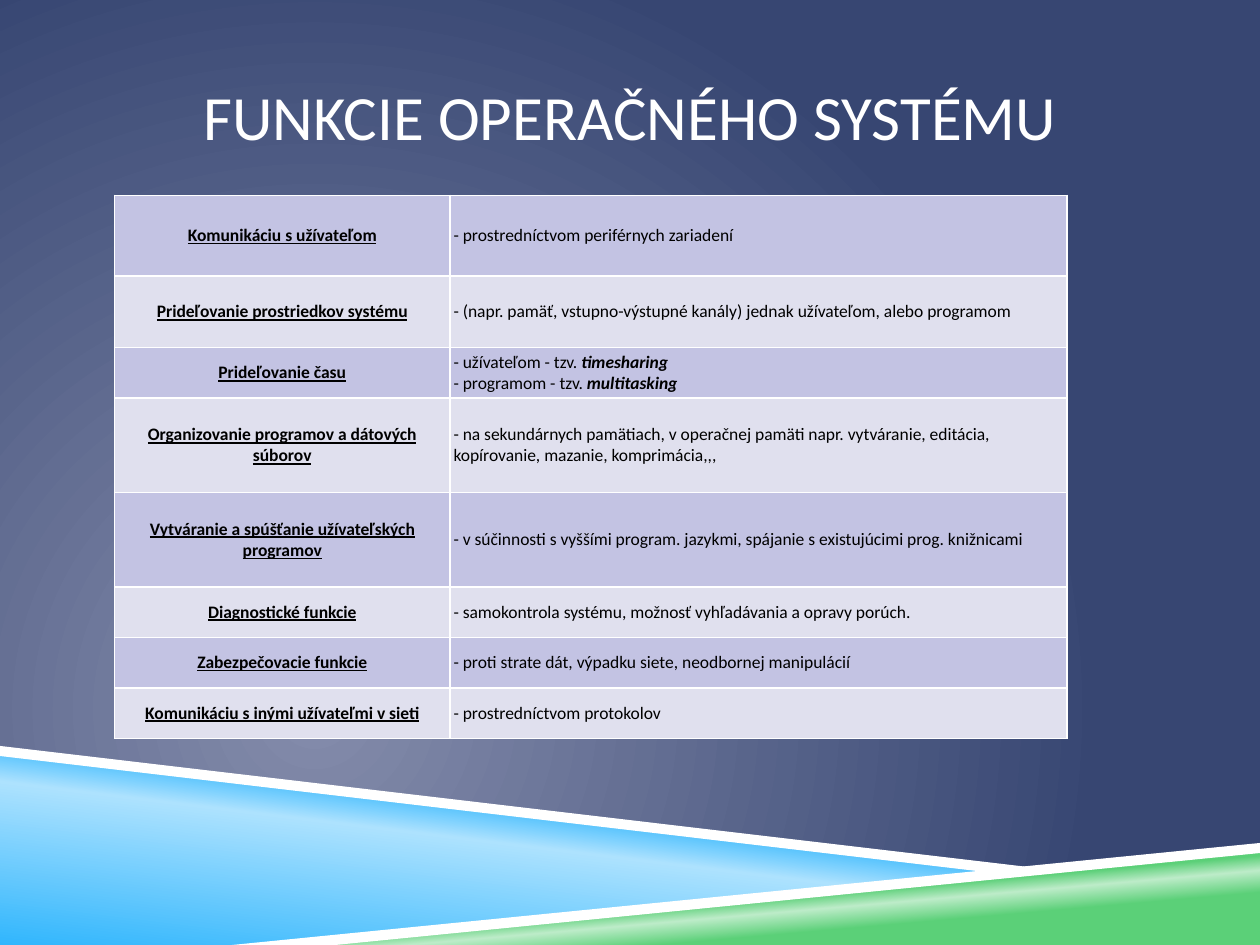
"""Build a slide with a table of operating system functions."""
from lxml.etree import SubElement
from pptx import Presentation
from pptx.dml.color import RGBColor
from pptx.enum.text import MSO_ANCHOR, PP_ALIGN
from pptx.oxml.ns import qn
from pptx.util import Inches, Pt

FONT = "Calibri"
WHITE = RGBColor(0xFF, 0xFF, 0xFF)
BLACK = RGBColor(0x00, 0x00, 0x00)
HAZE = RGBColor(0x84, 0x8C, 0xAB)
NAVY = RGBColor(0x37, 0x46, 0x72)
BLUE = RGBColor(0x31, 0xB6, 0xFD)
PALE_BLUE = RGBColor(0xAD, 0xE2, 0xFE)
GREEN = RGBColor(0x5B, 0xD0, 0x78)
PALE_GREEN = RGBColor(0xBD, 0xEC, 0xC9)
BANDS = (RGBColor(0xC3, 0xC3, 0xE3), RGBColor(0xE0, 0xE0, 0xEE))

COLUMN_WIDTHS = (2.66, 4.9)
FUNCTIONS = (
    (0.64, "Komunikáciu s užívateľom", "- prostredníctvom periférnych zariadení"),
    (0.57, "Prideľovanie prostriedkov systému",
     "- (napr. pamäť, vstupno-výstupné kanály) jednak užívateľom, alebo programom"),
    (0.4, "Prideľovanie času",
     "- užívateľom - tzv. *timesharing*\n- programom - tzv. *multitasking*"),
    (0.75, "Organizovanie programov a dátových súborov",
     "- na sekundárnych pamätiach, v operačnej pamäti napr. vytváranie, editácia, "
     "kopírovanie, mazanie, komprimácia,,,"),
    (0.75, "Vytváranie a spúšťanie užívateľských programov",
     "- v súčinnosti s vyššími program. jazykmi, spájanie s existujúcimi prog. knižnicami"),
    (0.4, "Diagnostické funkcie",
     "- samokontrola systému, možnosť vyhľadávania a opravy porúch."),
    (0.4, "Zabezpečovacie funkcie",
     "- proti strate dát, výpadku siete, neodbornej manipulácií"),
    (0.4, "Komunikáciu s inými užívateľmi v sieti", "- prostredníctvom protokolov"),
)


class SlideBuilder:
    """Holds the style and the current slide."""

    def __init__(self, prs):
        self.s = prs.slides.add_slide(prs.slide_layouts[6])

    def gradient(self, element, stops, angle=None):
        """Replace the solid fill of an element with a linear or circular gradient."""
        solid = next(element.iter(qn("a:solidFill")))
        grad = solid.makeelement(qn("a:gradFill"), {"rotWithShape": "1"})
        gs_list = SubElement(grad, qn("a:gsLst"))
        for position, color in stops:
            gs = SubElement(gs_list, qn("a:gs"), pos=str(position * 1000))
            SubElement(gs, qn("a:srgbClr"), val=str(color))
        if angle is None:
            circle = SubElement(grad, qn("a:path"), {"path": "circle"})
            SubElement(circle, qn("a:fillToRect"),
                       l="50000", t="100000", r="100000", b="50000")
        else:
            SubElement(grad, qn("a:lin"), ang=str(angle * 60000), scaled="0")
        solid.getparent().replace(solid, grad)

    def background(self, stops):
        """Fill the background with a circular gradient."""
        self.s.background.fill.solid()
        self.gradient(self.s.element, stops)

    def polygon(self, points, color=WHITE, stops=None, angle=0):
        """Draw a closed outline with a solid or gradient fill."""
        start, *rest = [(Inches(x), Inches(y)) for x, y in points]
        builder = self.s.shapes.build_freeform(*start)
        builder.add_line_segments(rest)
        sp = builder.convert_to_shape()
        sp.shadow.inherit = False
        sp.line.fill.background()
        sp.fill.solid()
        sp.fill.fore_color.rgb = color
        if stops:
            self.gradient(sp.element, stops, angle)

    def style(self, p, size, color, align):
        """Set the font and alignment of a paragraph."""
        p.alignment = align
        p.font.name = FONT
        p.font.size = Pt(size)
        p.font.color.rgb = color

    def title(self, text, left, top, width, height):
        """Add the centred slide title."""
        tf = self.s.shapes.add_textbox(
            Inches(left), Inches(top), Inches(width), Inches(height)).text_frame
        tf.word_wrap = True
        tf.vertical_anchor = MSO_ANCHOR.MIDDLE
        tf.margin_left = tf.margin_right = 0
        p = tf.paragraphs[0]
        p.text = text
        self.style(p, 36, WHITE, PP_ALIGN.CENTER)

    def cell(self, cell, text, fill, heading):
        """Fill a cell; text between asterisks is bold italic."""
        cell.fill.solid()
        cell.fill.fore_color.rgb = fill
        cell.vertical_anchor = MSO_ANCHOR.MIDDLE
        cell.margin_left = cell.margin_right = Inches(0.03)
        cell.margin_top = cell.margin_bottom = Inches(0.03)
        p = cell.text_frame.paragraphs[0]
        self.style(p, 10, BLACK, PP_ALIGN.CENTER if heading else PP_ALIGN.LEFT)
        p.font.bold = p.font.underline = heading
        for n, line in enumerate(text.split("\n")):
            if n:
                p.add_line_break()
            for i, part in enumerate(line.split("*")):
                if part:
                    r = p.add_run()
                    r.text = part
                    if i % 2:
                        r.font.bold = r.font.italic = True

    def table(self, rows, widths, left, top):
        """Add a banded table of (height, heading, description) rows."""
        height = sum(row[0] for row in rows)
        table = self.s.shapes.add_table(
            len(rows), len(widths), Inches(left), Inches(top),
            Inches(sum(widths)), Inches(height)).table
        table.first_row = table.horz_banding = False
        for column, width in zip(table.columns, widths):
            column.width = Inches(width)
        for i, (row_height, *texts) in enumerate(rows):
            table.rows[i].height = Inches(row_height)
            for j, text in enumerate(texts):
                self.cell(table.cell(i, j), text, BANDS[i % 2], j == 0)


def main():
    prs = Presentation()
    prs.slide_width, prs.slide_height = Inches(10), Inches(7.5)
    slide = SlideBuilder(prs)
    slide.background([(0, HAZE), (100, NAVY)])
    slide.polygon([(0, 5.97), (7.92, 6.92), (2, 7.5), (0, 7.5)],
                  stops=[(0, BLUE), (52, PALE_BLUE), (66, BLUE)], angle=277)
    slide.polygon([(1.98, 7.5), (10, 6.72), (10, 7.5)],
                  stops=[(28, GREEN), (40, PALE_GREEN), (48, GREEN)], angle=265)
    slide.polygon([(0, 5.92), (0, 6), (7.9, 6.93), (8.32, 6.9)])
    slide.polygon([(10, 6.69), (1.84, 7.5), (2.66, 7.5), (10, 6.77)])
    slide.title("FUNKCIE OPERAČNÉHO SYSTÉMU", 0.75, 0.29, 8.5, 1.25)
    slide.table(FUNCTIONS, COLUMN_WIDTHS, 0.91, 1.55)
    prs.save("out.pptx")


if __name__ == "__main__":
    main()
